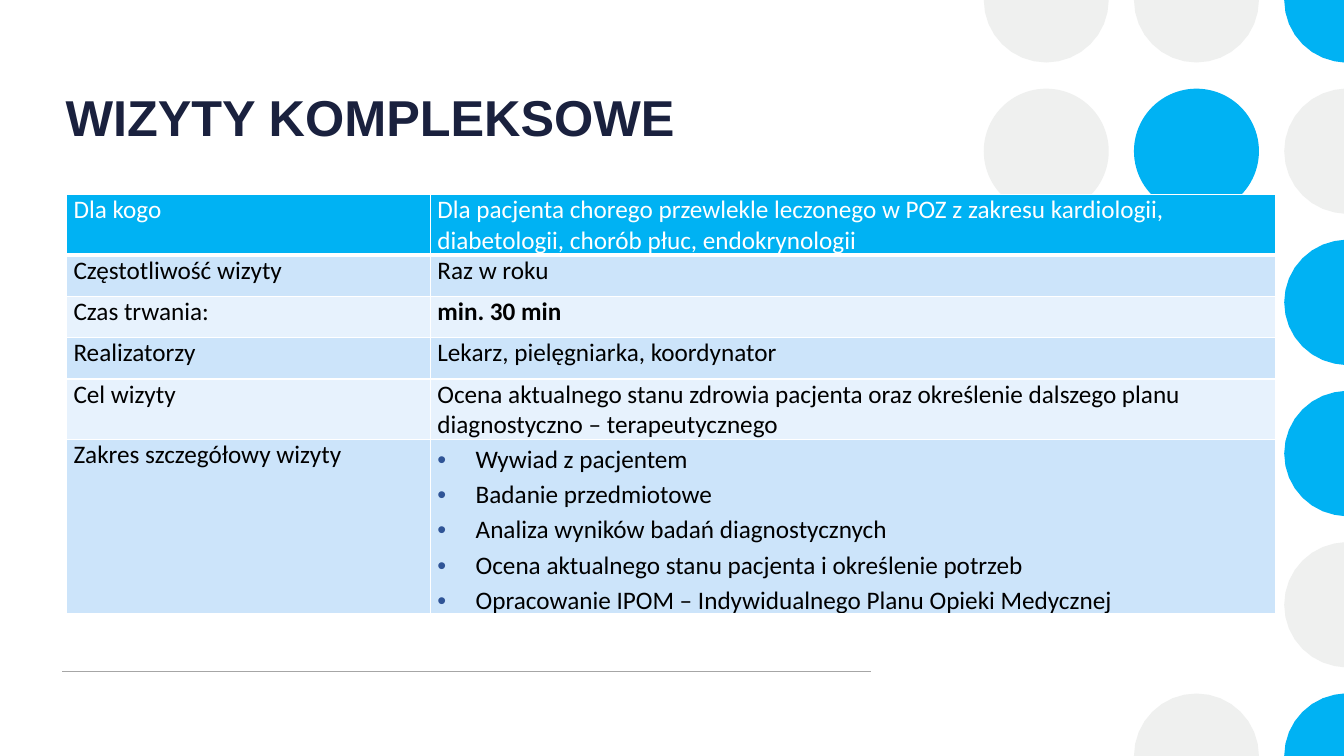
from dataclasses import dataclass
from math import cos, pi, sin

from lxml import etree
from pptx import Presentation
from pptx.dml.color import RGBColor
from pptx.enum.shapes import MSO_CONNECTOR, MSO_SHAPE
from pptx.enum.text import MSO_ANCHOR, MSO_AUTO_SIZE, PP_ALIGN
from pptx.oxml.ns import qn
from pptx.slide import Slide
from pptx.table import _Cell
from pptx.text.text import _Paragraph
from pptx.util import Inches, Pt

ELLIPSE = MSO_SHAPE.OVAL
STRAIGHT = MSO_CONNECTOR.STRAIGHT
LEFT = PP_ALIGN.LEFT
MIDDLE = MSO_ANCHOR.MIDDLE
GROW = MSO_AUTO_SIZE.SHAPE_TO_FIT_TEXT

SLIDE_W, SLIDE_H = Inches(40 / 3), Inches(7.5)
COLORS = {
    "blue": "00B2F3", "grey": "EFF0EF", "rule": "A6A6A6", "title": "1A213E",
    "white": "FFFFFF", "black": "000000", "bullet": "2F5496",
    "dark band": "CCE4FA", "light band": "E7F2FD",
}

# Dot grid: centres on rows a fifth of the slide high, starting at the top edge
DOT_LEFT, DOT_COLUMN, DOT_ROW = Inches(10.38), Inches(1.49), SLIDE_H / 5
DOT_RADIUS = Inches(0.62)
CURVE_STEPS = 32

# Table grid
TABLE_LEFT, TABLE_TOP = Inches(0.66), Inches(1.93)
TABLE_COLUMNS = (Inches(3.61), Inches(8.39))
TABLE_ROW = Inches(0.41)
TABLE_H = Inches(4.12)


@dataclass(frozen=True)
class Dot:
    column: int
    row: int
    color: str


@dataclass(frozen=True)
class VisitDetail:
    label: str
    lines: tuple[str, ...]
    bold: bool = False
    bulleted: bool = False


DOTS = (
    Dot(0, 0, "grey"), Dot(1, 0, "grey"), Dot(2, 0, "blue"),
    Dot(0, 1, "grey"), Dot(1, 1, "blue"), Dot(2, 1, "grey"),
    Dot(2, 2, "blue"), Dot(2, 3, "blue"), Dot(2, 4, "grey"),
    Dot(1, 5, "grey"), Dot(2, 5, "blue"),
)

VISIT_DETAILS = (
    VisitDetail("Dla kogo", (
        "Dla pacjenta chorego przewlekle leczonego w POZ z zakresu kardiologii, "
        "diabetologii, chorób płuc, endokrynologii",)),
    VisitDetail("Częstotliwość wizyty", ("Raz w roku",)),
    VisitDetail("Czas trwania:", ("min. 30 min",), bold=True),
    VisitDetail("Realizatorzy", ("Lekarz, pielęgniarka, koordynator",)),
    VisitDetail("Cel wizyty", (
        "Ocena aktualnego stanu zdrowia pacjenta oraz określenie dalszego planu "
        "diagnostyczno – terapeutycznego",)),
    VisitDetail("Zakres szczegółowy wizyty", (
        "Wywiad z pacjentem",
        "Badanie przedmiotowe",
        "Analiza wyników badań diagnostycznych",
        "Ocena aktualnego stanu pacjenta i określenie potrzeb",
        "Opracowanie IPOM – Indywidualnego Planu Opieki Medycznej",
    ), bulleted=True),
)


def rgb(name: str) -> RGBColor:
    return RGBColor.from_string(COLORS[name])


def add_run(paragraph: _Paragraph, text: str, font: str, size: int,
            color: str, bold: bool) -> None:
    run = paragraph.add_run()
    run.text = text
    run.font.name = font
    run.font.size = Pt(size)
    run.font.bold = bold
    run.font.color.rgb = rgb(color)


def cut_outline(x: float, y: float) -> list[tuple[int, int]]:
    """Trace a dot held inside the slide, without spare points on the edges."""
    angles = [2 * pi * step / CURVE_STEPS for step in range(CURVE_STEPS)]
    traced = [(round(min(max(x + DOT_RADIUS * cos(a), 0), SLIDE_W)),
               round(min(max(y + DOT_RADIUS * sin(a), 0), SLIDE_H)))
              for a in angles]
    points = list(dict.fromkeys(traced))
    return [point for index, point in enumerate(points)
            if not any(points[index - 1][axis] == point[axis]
                       == points[(index + 1) % len(points)][axis] == edge
                       for axis, edge in ((0, SLIDE_W), (1, 0), (1, SLIDE_H)))]


def add_dot(slide: Slide, dot: Dot) -> None:
    x = DOT_LEFT + dot.column * DOT_COLUMN
    y = dot.row * DOT_ROW
    inside = (DOT_RADIUS <= x <= SLIDE_W - DOT_RADIUS
              and DOT_RADIUS <= y <= SLIDE_H - DOT_RADIUS)
    if inside:
        circle = slide.shapes.add_shape(
            ELLIPSE, int(x - DOT_RADIUS), int(y - DOT_RADIUS),
            2 * DOT_RADIUS, 2 * DOT_RADIUS)
    else:
        start, *others = cut_outline(x, y)
        builder = slide.shapes.build_freeform(*start)
        builder.add_line_segments(others, close=True)
        circle = builder.convert_to_shape()
    circle.shadow.inherit = False
    circle.fill.solid()
    circle.fill.fore_color.rgb = rgb(dot.color)
    circle.line.fill.background()


def add_footer_rule(slide: Slide) -> None:
    y = Inches(6.66)
    rule = slide.shapes.add_connector(STRAIGHT, Inches(0.62), y, Inches(8.64), y)
    rule.line.color.rgb = rgb("rule")
    rule.line.width = Pt(1)
    etree.SubElement(rule._element.spPr, qn("a:effectLst"))


def write_title(slide: Slide, text: str) -> None:
    title = slide.shapes.title
    title.left, title.top = Inches(0.55), Inches(0.8)
    title.width, title.height = Inches(8.13), Inches(0.71)
    frame = title.text_frame
    frame.word_wrap = True
    frame.auto_size = GROW
    frame.vertical_anchor = MIDDLE
    paragraph = frame.paragraphs[0]
    paragraph.alignment = LEFT
    add_run(paragraph, text, "Arial", 36, "title", True)


def add_bullet(paragraph: _Paragraph) -> None:
    properties = paragraph._p.get_or_add_pPr()
    properties.set("marL", str(Inches(0.38)))
    properties.set("indent", str(-Inches(0.38)))
    tint = etree.SubElement(properties, qn("a:buClr"))
    etree.SubElement(tint, qn("a:srgbClr"), val=COLORS["bullet"])
    etree.SubElement(properties, qn("a:buFont"), typeface="Arial")
    etree.SubElement(properties, qn("a:buChar"), char="•")
    paragraph.line_spacing = 1.15


def add_header_borders(cell: _Cell) -> None:
    properties = cell._tc.get_or_add_tcPr()
    for side, points in (("lnL", 1), ("lnR", 1), ("lnT", 1), ("lnB", 3)):
        border = etree.SubElement(properties, qn(f"a:{side}"), w=str(Pt(points)))
        paint = etree.SubElement(border, qn("a:solidFill"))
        etree.SubElement(paint, qn("a:srgbClr"), val=COLORS["white"])


def write_cell(cell: _Cell, lines: tuple[str, ...], color: str, band: str,
               bold: bool = False, bulleted: bool = False) -> None:
    cell.margin_left = cell.margin_right = Inches(0.07)
    cell.margin_top = cell.margin_bottom = 0
    cell.fill.solid()
    cell.fill.fore_color.rgb = rgb(band)
    frame = cell.text_frame
    for index, line in enumerate(lines):
        paragraph = frame.add_paragraph() if index else frame.paragraphs[0]
        if bulleted:
            add_bullet(paragraph)
        add_run(paragraph, line, "Calibri", 18, color, bold)


def add_visit_table(slide: Slide) -> None:
    holder = slide.shapes.add_table(
        len(VISIT_DETAILS), len(TABLE_COLUMNS), TABLE_LEFT, TABLE_TOP,
        sum(TABLE_COLUMNS), TABLE_H)
    table = holder.table
    for column, width in zip(table.columns, TABLE_COLUMNS):
        column.width = width
    for index, detail in enumerate(VISIT_DETAILS):
        table.rows[index].height = TABLE_ROW
        label, content = table.rows[index].cells
        color, band = "black", "dark band" if index % 2 else "light band"
        if index == 0:
            color, band = "white", "blue"
            add_header_borders(label)
            add_header_borders(content)
        write_cell(label, (detail.label,), color, band)
        write_cell(content, detail.lines, color, band, detail.bold, detail.bulleted)
    holder.height = TABLE_H


if __name__ == "__main__":
    deck = Presentation()
    deck.slide_width, deck.slide_height = SLIDE_W, SLIDE_H
    visit_slide = deck.slides.add_slide(deck.slide_layouts[5])
    for background_dot in DOTS:
        add_dot(visit_slide, background_dot)
    add_footer_rule(visit_slide)
    write_title(visit_slide, "WIZYTY KOMPLEKSOWE")
    add_visit_table(visit_slide)
    deck.save("out.pptx")
